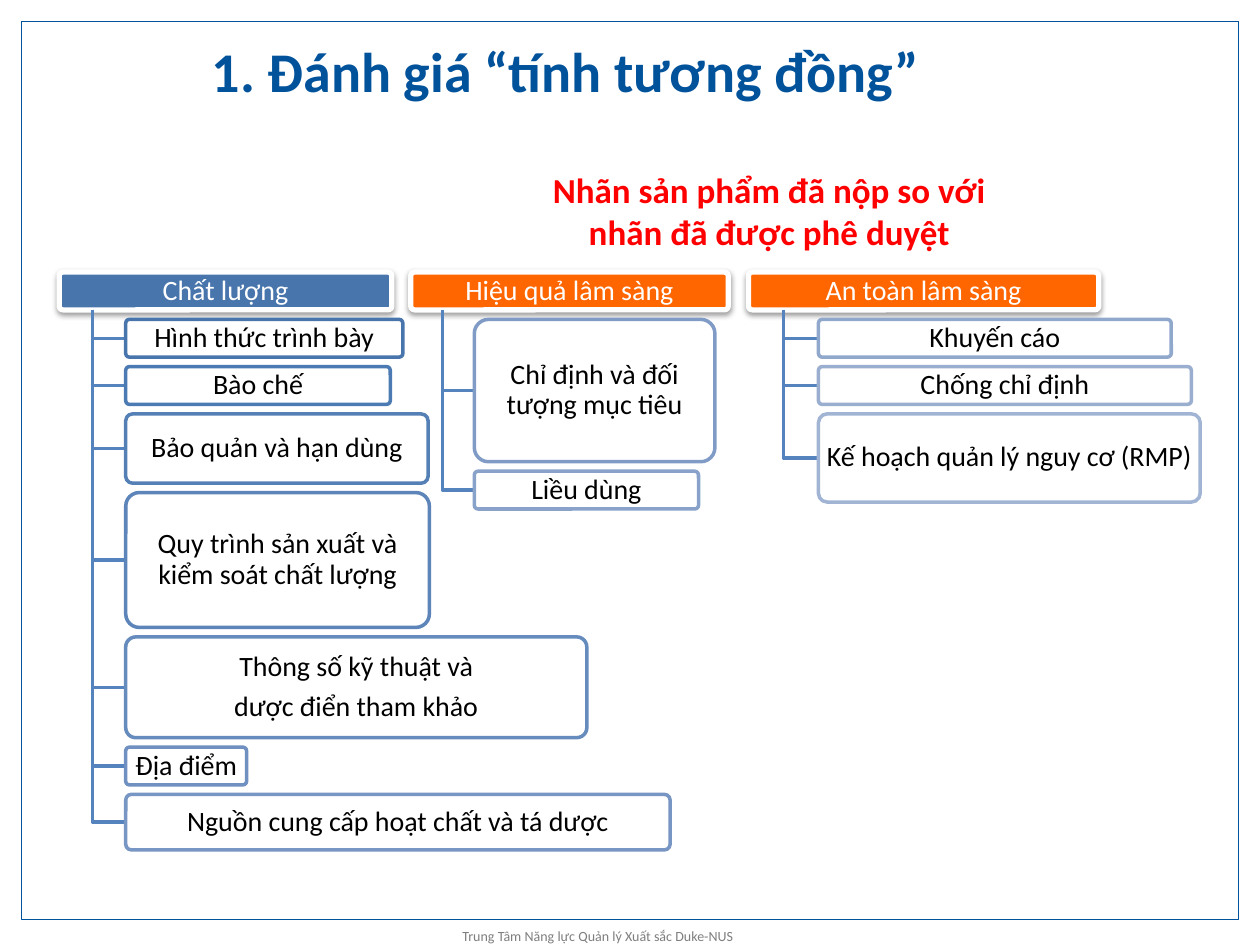
import pptx
import pptx.util
import pptx.dml.color
import pptx.enum.shapes
import pptx.enum.text
import pptx.oxml
import pptx.oxml.ns

Inches = pptx.util.Inches
Pt = pptx.util.Pt
RGBColor = pptx.dml.color.RGBColor
MSO_SHAPE = pptx.enum.shapes.MSO_SHAPE
MSO_ANCHOR = pptx.enum.text.MSO_ANCHOR
PP_ALIGN = pptx.enum.text.PP_ALIGN

NAVY = RGBColor(0x00, 0x52, 0x9B)
BLUE = RGBColor(0x48, 0x75, 0xAC)
BRANCH_BLUE = RGBColor(0x54, 0x83, 0xBE)
ORANGE = RGBColor(0xFF, 0x66, 0x00)
RED = RGBColor(0xFF, 0x00, 0x00)
GREY = RGBColor(0x7E, 0x7E, 0x7E)
WHITE = RGBColor(0xFF, 0xFF, 0xFF)
BLACK = RGBColor(0x00, 0x00, 0x00)
BOX_LINES = [RGBColor.from_string(code) for code in (
    "4875AC 4C7AB3 5580B6 5D85B9 668BBD 6F90C0 "
    "7796C3 809CC6 89A2CA 91A8CD 9AAED0 A2B4D4").split()]

HEADER_TOP = Inches(2.16)
HEADER_HEIGHT = Inches(0.3)
BOX_GAP = Inches(0.3) // 4

# Header, left, width, fill, then boxes as (lines, width, height)
COLUMNS = [
    ("Chất lượng", 0.47, 2.64, BLUE, [
        (["Hình thức trình bày"], 2.2, 0.3),
        (["Bào chế"], 2.1, 0.3),
        (["Bảo quản và hạn dùng"], 2.4, 0.55),
        (["Quy trình sản xuất và kiểm soát chất lượng"], 2.41, 1.07),
        (["Thông số kỹ thuật và", "dược điển tham khảo"], 3.66, 0.8),
        (["Địa điểm"], 0.96, 0.3),
        (["Nguồn cung cấp hoạt chất và tá dược"], 4.32, 0.44),
    ]),
    ("Hiệu quả lâm sàng", 3.26, 2.52, ORANGE, [
        (["Chỉ định và đối tượng mục tiêu"], 1.91, 1.13),
        (["Liều dùng"], 1.78, 0.3),
    ]),
    ("An toàn lâm sàng", 5.94, 2.78, ORANGE, [
        (["Khuyến cáo"], 2.8, 0.3),
        (["Chống chỉ định"], 2.96, 0.3),
        (["Kế hoạch quản lý nguy cơ (RMP)"], 3.03, 0.7),
    ]),
]

SHADOW_XML = (
    f'<a:effectLst {pptx.oxml.ns.nsdecls("a")}>'
    '<a:outerShdw blurRad="40000" dist="20000" dir="5400000" rotWithShape="0">'
    '<a:srgbClr val="000000"><a:alpha val="38000"/></a:srgbClr>'
    '</a:outerShdw></a:effectLst>')

presentation = pptx.Presentation()
presentation.slide_width = Inches(10)
presentation.slide_height = Inches(7.5)
slide = presentation.slides.add_slide(presentation.slide_layouts[6])


def write_lines(shape, lines, size, color, margins, alignment=PP_ALIGN.CENTER,
                bold=False, line_spacing=None, gap=0):
    """Fill the shape with one paragraph per line; margins are horizontal, vertical."""
    frame = shape.text_frame
    frame.word_wrap = True
    frame.margin_left = frame.margin_right = Inches(margins[0])
    frame.margin_top = frame.margin_bottom = Inches(margins[1])
    for index, line in enumerate(lines):
        paragraph = frame.add_paragraph() if index else frame.paragraphs[0]
        paragraph.text = line
        paragraph.alignment = alignment
        paragraph.line_spacing = line_spacing
        if index:
            paragraph.space_before = Pt(gap)
        paragraph.font.name = "Calibri"
        paragraph.font.size = Pt(size)
        paragraph.font.bold = bold
        paragraph.font.color.rgb = color


def add_box(left, top, width, height, lines, fill, line_color, line_width, text_color):
    box = slide.shapes.add_shape(MSO_SHAPE.ROUNDED_RECTANGLE, left, top, width, height)
    box.adjustments[0] = 0.1
    box.shadow.inherit = False
    box.fill.solid()
    box.fill.fore_color.rgb = fill
    box.line.color.rgb = line_color
    box.line.width = Pt(line_width)
    box.text_frame.vertical_anchor = MSO_ANCHOR.MIDDLE
    write_lines(box, lines, 16, text_color, (0.03, 0.02), line_spacing=0.9, gap=5.6)
    return box


border = slide.shapes.add_shape(
    MSO_SHAPE.RECTANGLE, Inches(0.17), Inches(0.17), Inches(9.66), Inches(7.13))
border.shadow.inherit = False
border.fill.background()
border.line.color.rgb = NAVY
border.line.width = Pt(0.75)

title = slide.shapes.add_textbox(Inches(1.67), Inches(0.28), Inches(7.25), Inches(0.55))
write_lines(title, ["1. Đánh giá “tính tương đồng”"], 32, NAVY, (0.01, 0.01),
            PP_ALIGN.LEFT, bold=True)

footer = slide.shapes.add_textbox(Inches(3.66), Inches(7.37), Inches(2.69), Inches(0.13))
write_lines(footer, ["Trung Tâm Năng lực Quản lý Xuất sắc Duke-NUS"], 8, GREY, (0.01, 0),
            PP_ALIGN.LEFT, line_spacing=Pt(8.7))

tints = iter(BOX_LINES)
for heading, column_left, column_width, column_fill, boxes in COLUMNS:
    left = Inches(column_left)
    width = Inches(column_width)
    header = add_box(left, HEADER_TOP, width, HEADER_HEIGHT, [heading],
                     column_fill, WHITE, 3, WHITE)
    properties = header._element.spPr
    properties.remove(properties.find(pptx.oxml.ns.qn("a:effectLst")))
    properties.append(pptx.oxml.parse_xml(SHADOW_XML))

    rail = left + width // 10
    box_left = left + width // 5
    header_bottom = HEADER_TOP + HEADER_HEIGHT
    top = header_bottom + BOX_GAP
    for lines, box_width, box_height in boxes:
        height = Inches(box_height)
        middle = top + height // 2
        builder = slide.shapes.build_freeform(rail, header_bottom)
        builder.add_line_segments([(rail, middle), (box_left, middle)], close=False)
        branch = builder.convert_to_shape()
        branch.shadow.inherit = False
        branch.fill.background()
        branch.line.color.rgb = BRANCH_BLUE
        branch.line.width = Pt(2)
        add_box(box_left, top, Inches(box_width), height, lines,
                WHITE, next(tints), 2, BLACK)
        top += height + BOX_GAP

comparison = slide.shapes.add_textbox(
    Inches(3.02), Inches(1.29), Inches(6.17), Inches(0.77))
write_lines(comparison, ["Nhãn sản phẩm đã nộp so với", "nhãn đã được phê duyệt"],
            20, RED, (0.1, 0.05), bold=True)

presentation.save("out.pptx")
